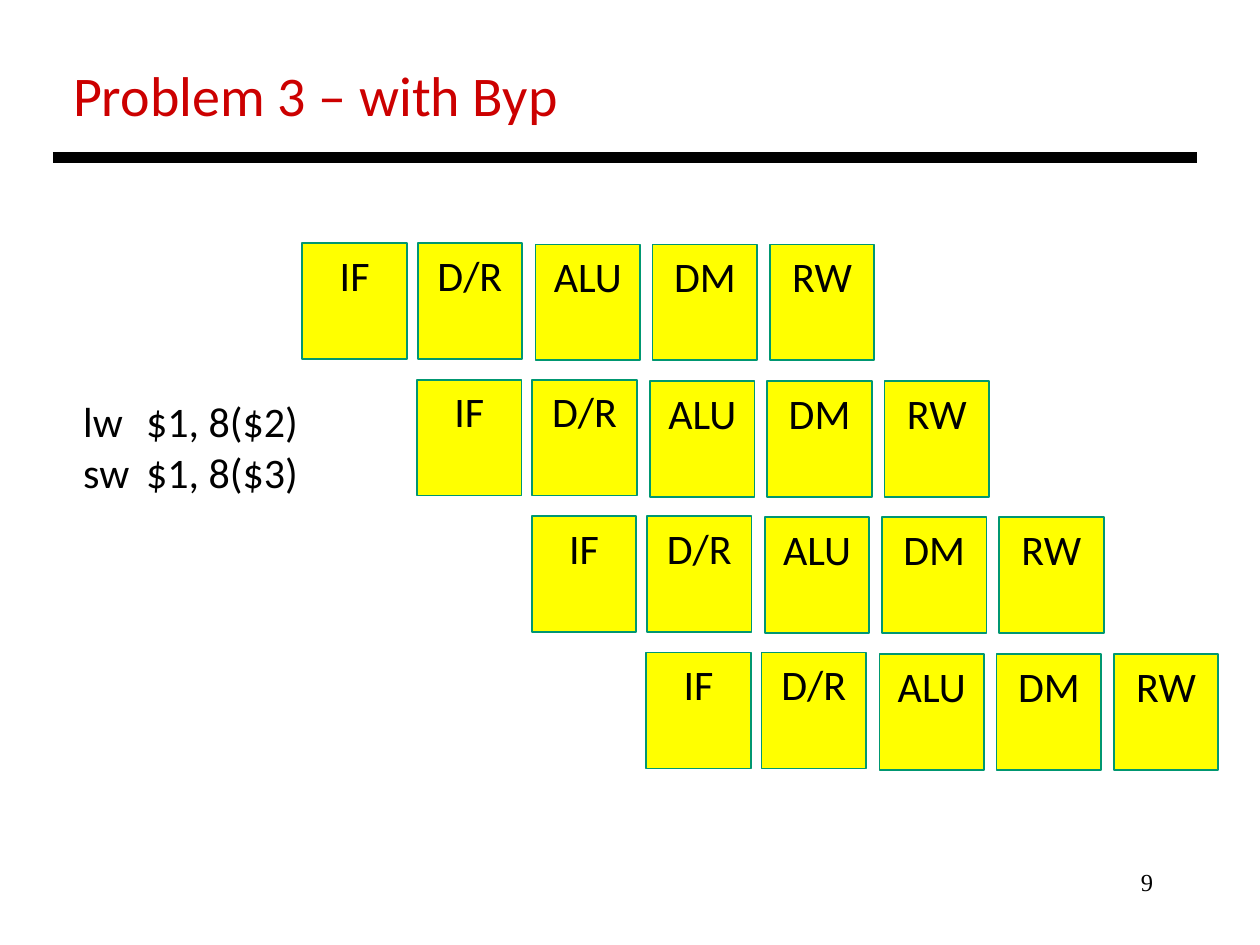
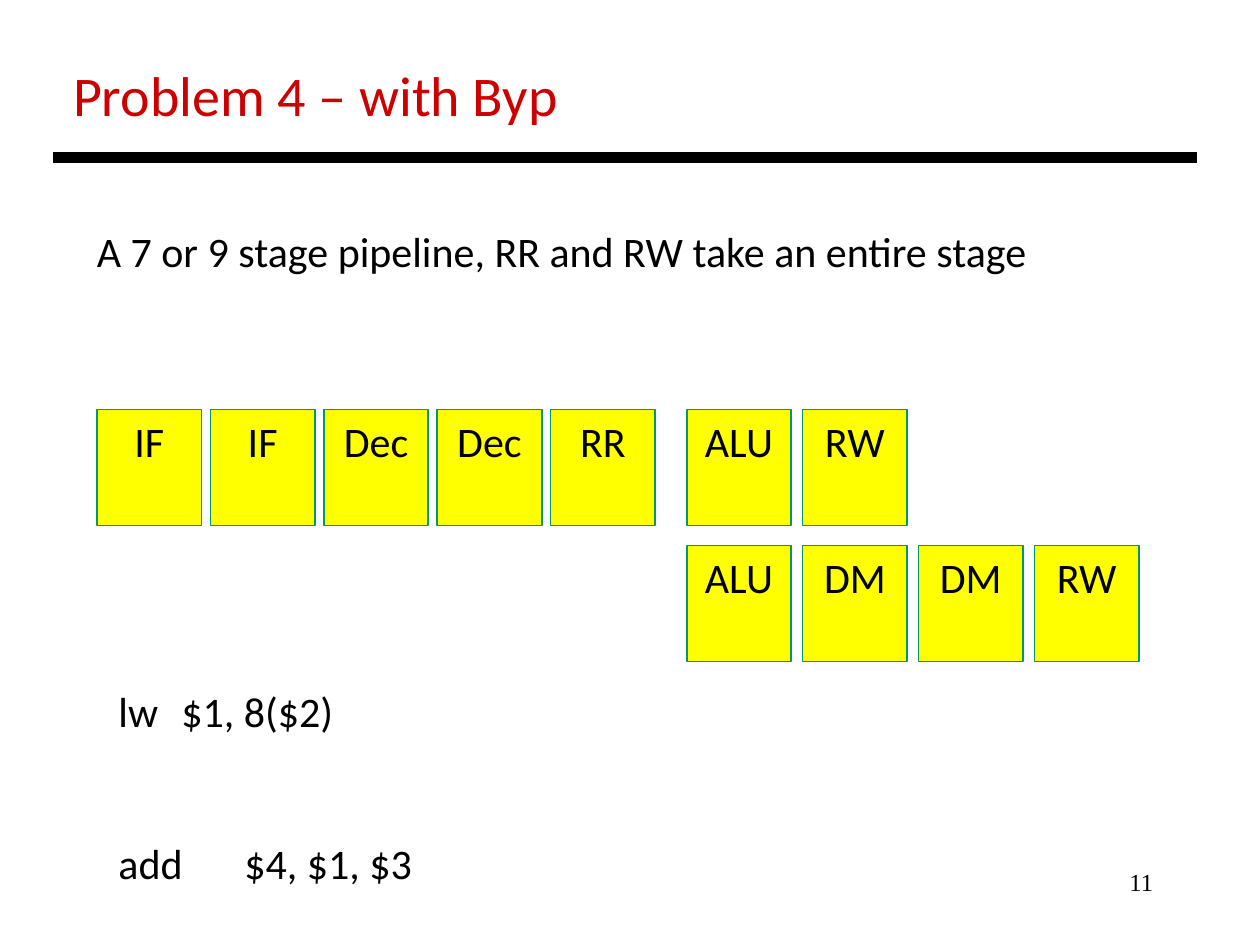
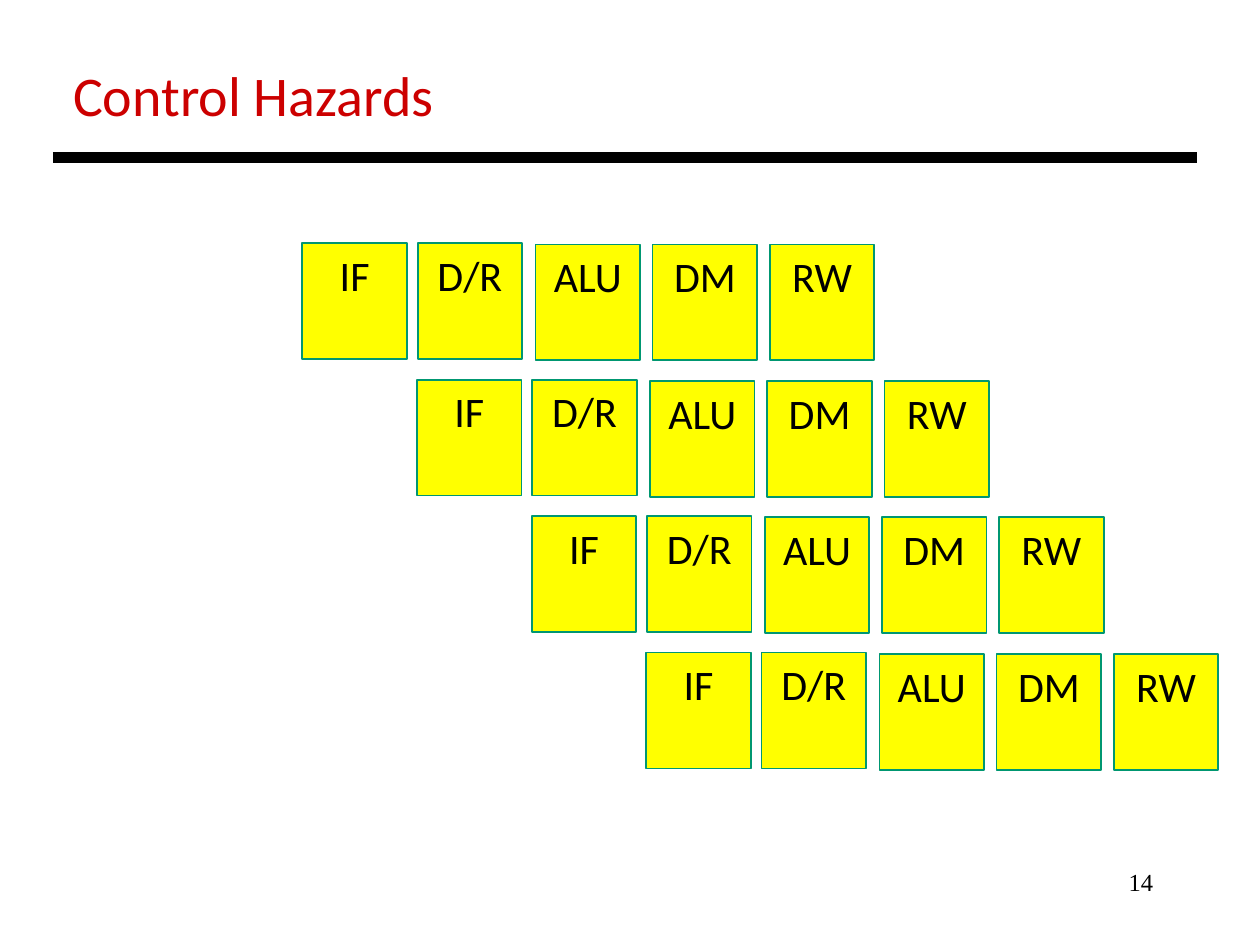
import dataclasses

import pptx
import pptx.dml.color
import pptx.enum.shapes
import pptx.enum.text
import pptx.oxml
import pptx.oxml.ns
import pptx.util

ALIGN = pptx.enum.text.PP_ALIGN
COLS, ROWS = 100, 75


@dataclasses.dataclass(frozen=True)
class Theme:
    red: str = "CC0000"
    ink: str = "000000"
    fill: str = "FFFF00"
    edge: str = "009771"
    font: str = "Calibri"
    serif: str = "Times New Roman"
    head: int = 32
    text: int = 24
    foot: int = 14
    rule: int = 6


THEME = Theme()


def rgb(code):
    return pptx.dml.color.RGBColor.from_string(code)


def put(frame, text, size=THEME.text, color=THEME.ink, font=THEME.font,
        align=ALIGN.LEFT, gap=0):
    """Fill a frame with one paragraph per line; gap is the space between."""
    frame.word_wrap = True
    frame.auto_size = pptx.enum.text.MSO_AUTO_SIZE.NONE
    frame.vertical_anchor = pptx.enum.text.MSO_ANCHOR.TOP
    frame.text = text
    for i, para in enumerate(frame.paragraphs):
        para.alignment = align
        para.space_before = pptx.util.Pt(gap if i else 0)
        for run in para.runs:
            run.font.name = font
            run.font.size = pptx.util.Pt(size)
            run.font.color.rgb = rgb(color)


class Deck:
    def __init__(self, theme):
        self.theme = theme
        self.show = pptx.Presentation()
        self.show.slide_width = pptx.util.Inches(10)
        self.show.slide_height = pptx.util.Inches(7.5)
        self.slide = None

    def grid(self, *spots):
        """Turn column, row pairs into lengths."""
        sizes = (self.show.slide_width / COLS, self.show.slide_height / ROWS)
        return [round(spot * sizes[i % 2]) for i, spot in enumerate(spots)]

    def place(self, shape, *spots):
        shape.left, shape.top, shape.width, shape.height = self.grid(*spots)

    # Shared frame: title, rule and page number
    def page(self, title, number, body=False):
        look = self.theme
        layout = self.show.slide_layouts[1 if body else 5]
        self.slide = self.show.slides.add_slide(layout)
        head = self.slide.shapes.title
        self.place(head, 4.8, 4.3, 90, 6.4)
        put(head.text_frame, title, size=look.head, color=look.red)
        self.rule(4.2, 95, 12.5)
        self.note(number, 71.7, 68.3, 20.8, 5, size=look.foot,
                  font=look.serif, align=ALIGN.RIGHT)

    def rule(self, start, end, row):
        line = self.slide.shapes.add_connector(
            pptx.enum.shapes.MSO_CONNECTOR.STRAIGHT,
            *self.grid(start, row, end, row))
        line.line.color.rgb = rgb(self.theme.ink)
        line.line.width = pptx.util.Pt(self.theme.rule)
        line._element.spPr.append(pptx.oxml.parse_xml(
            "<a:effectLst %s/>" % pptx.oxml.ns.nsdecls("a")))

    def note(self, text, *spots, **form):
        box = self.slide.shapes.add_textbox(*self.grid(*spots))
        put(box.text_frame, text, **form)

    def code(self, lines, *spots, gap=0):
        """List (name, operands, tab column) lines in the body placeholder."""
        body = self.slide.placeholders[1]
        self.place(body, *spots)
        put(body.text_frame, "\n".join(f"{op}\t{args}" for op, args, _ in lines),
            gap=gap)
        for para, (_, _, tab) in zip(body.text_frame.paragraphs, lines):
            props = para._p.get_or_add_pPr()
            props.set("marL", "0")
            props.set("indent", "0")
            names = pptx.oxml.ns.nsdecls("a")
            props.append(pptx.oxml.parse_xml(f"<a:buNone {names}/>"))
            props.append(pptx.oxml.parse_xml(
                f'<a:tabLst {names}><a:tab pos="{self.grid(tab)[0]}" algn="l"/>'
                "</a:tabLst>"))

    def stage(self, name, col, row):
        look = self.theme
        box = self.slide.shapes.add_shape(
            pptx.enum.shapes.MSO_SHAPE.RECTANGLE,
            *self.grid(col, row, 8.3, 9.2))
        box.shadow.inherit = False
        box.fill.solid()
        box.fill.fore_color.rgb = rgb(look.fill)
        box.line.color.rgb = rgb(look.edge)
        box.line.width = pptx.util.Pt(1)
        put(box.text_frame, name, align=ALIGN.CENTER)
        box.text_frame.margin_left = box.text_frame.margin_right = 0

    def chain(self, names, col, row, step):
        for i, name in enumerate(names.split()):
            self.stage(name, col + i * step, row)

    def stairs(self):
        """Four instructions, each one cycle after the last."""
        for i in range(4):
            col, row = 24 + 9.1 * i, 19.3 + 10.83 * i
            self.chain("IF D/R", col, row, 9.15)
            self.chain("ALU DM RW", col + 18.5, row + 0.1, 9.3)


def main():
    deck = Deck(THEME)

    # Five stages with bypassing
    deck.page("Problem 3 – with Byp", "9", body=True)
    deck.stairs()
    deck.code([("lw", "$1, 8($2)", 6.2), ("sw", "$1, 8($3)", 6.7)],
              5.6, 30.9, 21, 9.1)

    # Seven or nine stages
    deck.page("Problem 4 – with Byp", "11", body=True)
    deck.note("A 7 or 9 stage pipeline, RR and RW take an entire stage",
              6.7, 17.4, 80, 5)
    deck.chain("IF IF Dec Dec RR", 7.7, 32.5, 9)
    deck.chain("ALU RW", 54.5, 32.5, 9.2)
    deck.chain("ALU DM DM RW", 54.5, 43.3, 9.2)
    deck.code([("lw", "$1, 8($2)", 6.2), ("add", "$4, $1, $3", 8.1)],
              8.4, 53.9, 26, 17.2, gap=58)

    # Control hazards
    deck.page("Control Hazards", "14")
    deck.stairs()

    deck.show.save("out.pptx")


if __name__ == "__main__":
    main()
